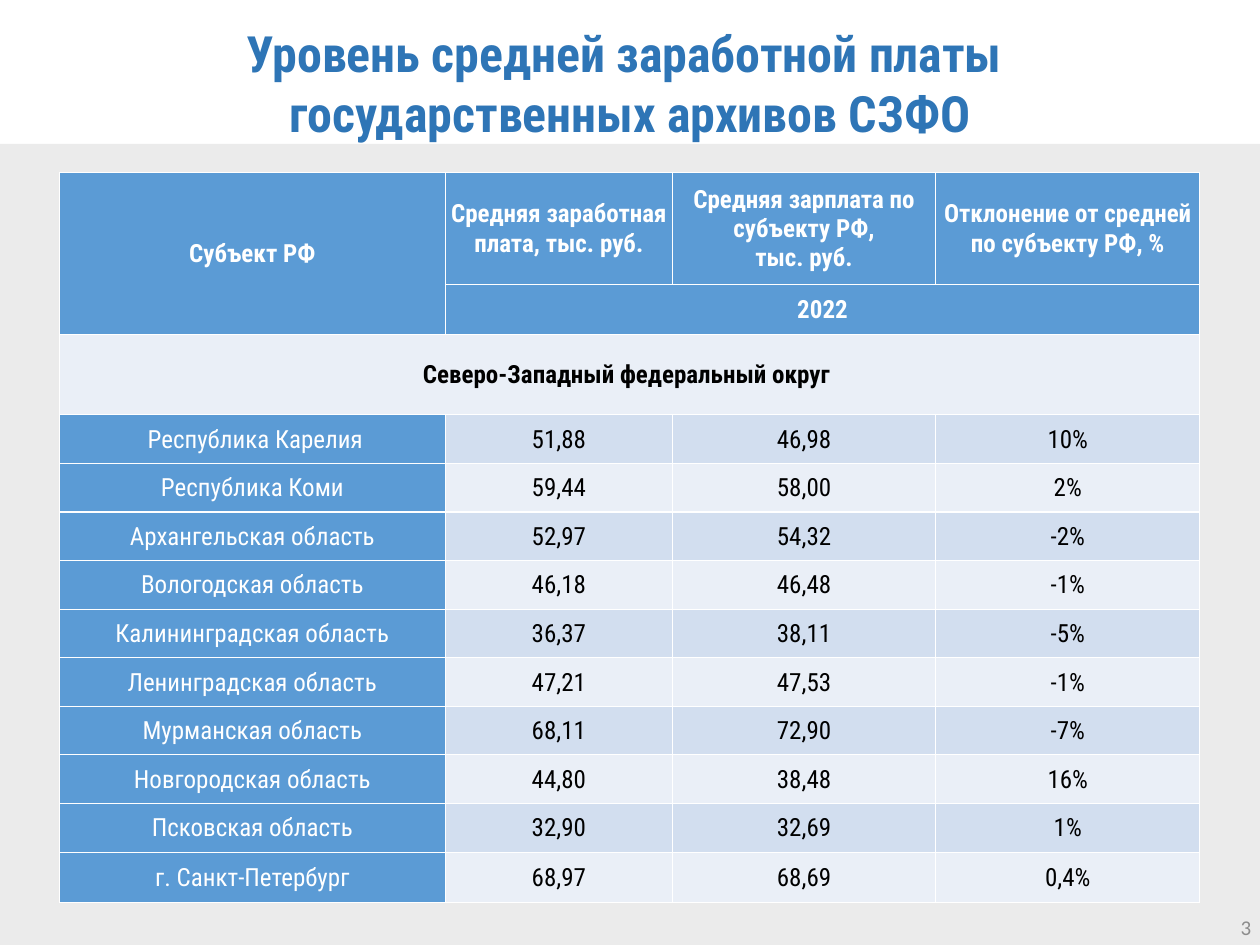
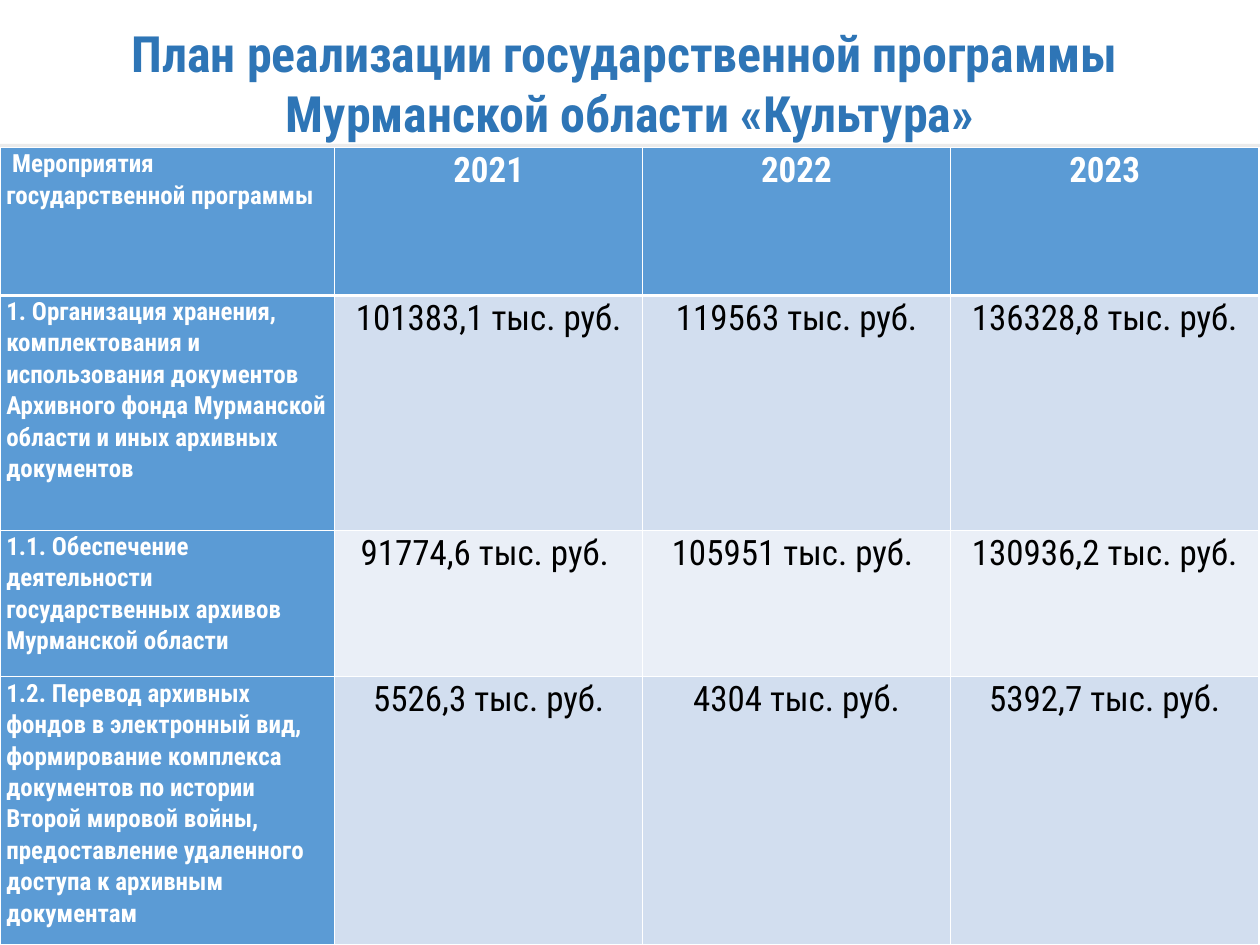
import pptx
import pptx.dml.color
import pptx.enum.shapes
import pptx.enum.text
import pptx.oxml
import pptx.oxml.ns
import pptx.util
from pptx.util import Inches

RGBColor = pptx.dml.color.RGBColor
PP_ALIGN = pptx.enum.text.PP_ALIGN
MSO_ANCHOR = pptx.enum.text.MSO_ANCHOR

WHITE = RGBColor(0xFF, 0xFF, 0xFF)
BLACK = RGBColor(0, 0, 0)
PANEL = RGBColor(0xEB, 0xEB, 0xEB)
TITLE_BLUE = RGBColor(0x2E, 0x75, 0xB6)
HEAD_BLUE = RGBColor(0x5B, 0x9B, 0xD5)
BAND_DARK = RGBColor(0xD2, 0xDE, 0xEF)
BAND_LIGHT = RGBColor(0xEA, 0xEF, 0xF7)
NUMBER_GRAY = RGBColor(0x8C, 0x8C, 0x8C)
FONT = "Roboto Condensed"

SALARIES = [
    (" Республика Карелия", "51,88", "46,98", "10%"),
    ("Республика Коми", "59,44", "58,00", "2%"),
    ("Архангельская область", "52,97", "54,32", "-2%"),
    ("Вологодская область", "46,18", "46,48", "-1%"),
    ("Калининградская область", "36,37", "38,11", "-5%"),
    ("Ленинградская область", "47,21", "47,53", "-1%"),
    ("Мурманская область", "68,11", "72,90", "-7%"),
    ("Новгородская область", "44,80", "38,48", "16%"),
    ("Псковская область", "32,90", "32,69", "1%"),
    ("г. Санкт-Петербург", "68,97", "68,69", "0,4%"),
]

PROGRAMME = [
    ("1. Организация хранения, комплектования и использования документов "
     "Архивного фонда Мурманской области и иных архивных документов",
     "101383,1 тыс. руб.", "119563 тыс. руб.", "136328,8 тыс. руб."),
    ("1.1. Обеспечение деятельности государственных архивов Мурманской области",
     "91774,6 тыс. руб. ", "105951 тыс. руб. ", "130936,2 тыс. руб."),
    ("1.2. Перевод архивных фондов в электронный вид, формирование комплекса "
     "документов по истории Второй мировой войны, предоставление удаленного "
     "доступа к архивным документам",
     "5526,3 тыс. руб.", "4304 тыс. руб.", "5392,7 тыс. руб."),
]


def write(tf, text, size, color, bold=False, align=PP_ALIGN.CENTER, spacing=1.0, font=FONT):
    tf.text = text
    for p in tf.paragraphs:
        p.alignment = align
        p.line_spacing = spacing
        p.font.name = font
        p.font.size = pptx.util.Pt(size)
        p.font.bold = bold
        p.font.color.rgb = color


def add_band(s, top, height, color):
    sp = s.shapes.add_shape(pptx.enum.shapes.MSO_SHAPE.RECTANGLE,
                            0, Inches(top), Inches(14), Inches(height))
    sp.shadow.inherit = False
    sp.fill.solid()
    sp.fill.fore_color.rgb = color
    sp.line.fill.background()


def add_base_slide(prs, title):
    s = prs.slides.add_slide(prs.slide_layouts[5])
    add_band(s, 0, 1, WHITE)
    add_band(s, 1.6, 8.9, PANEL)
    sp = s.shapes.title
    sp.element.getparent().append(sp.element)
    sp.left, sp.top, sp.width, sp.height = 0, Inches(0.2), Inches(14), Inches(1.45)
    tf = sp.text_frame
    tf.word_wrap = True
    tf.auto_size = pptx.enum.text.MSO_AUTO_SIZE.NONE
    tf.vertical_anchor = MSO_ANCHOR.TOP
    write(tf, title, 40, TITLE_BLUE, bold=True)
    return s


def add_page_number(s, number):
    tf = s.shapes.add_textbox(Inches(10.85), Inches(10.02),
                              Inches(3.15), Inches(0.56)).text_frame
    tf.word_wrap = True
    tf.vertical_anchor = MSO_ANCHOR.MIDDLE
    write(tf, number, 16.8, NUMBER_GRAY, align=PP_ALIGN.RIGHT, font="Calibri")


def set_borders(cell, bottom=1):
    tcPr = cell._tc.get_or_add_tcPr()
    for side, width in (("L", 1), ("R", 1), ("T", 1), ("B", bottom)):
        tcPr.append(pptx.oxml.parse_xml(
            f'<a:ln{side} {pptx.oxml.ns.nsdecls("a")} w="{pptx.util.Pt(width)}">'
            f'<a:solidFill><a:srgbClr val="{WHITE}"/></a:solidFill></a:ln{side}>'))


def add_grid(s, left, top, widths, heights):
    table = s.shapes.add_table(len(heights), len(widths), Inches(left), Inches(top),
                               Inches(sum(widths)), Inches(sum(heights))).table
    table.first_row = table.horz_banding = False
    for column, width in zip(table.columns, widths):
        column.width = Inches(width)
    for row, height in zip(table.rows, heights):
        row.height = Inches(height)
    return table


def style_cell(cell, fill, side_margin, top_margin=0, anchor=MSO_ANCHOR.TOP, bottom=1):
    set_borders(cell, bottom)
    cell.fill.solid()
    cell.fill.fore_color.rgb = fill
    cell.margin_left = cell.margin_right = Inches(side_margin)
    cell.margin_top, cell.margin_bottom = Inches(top_margin), 0
    cell.vertical_anchor = anchor


def add_salary_table(s):
    table = add_grid(s, 0.66, 1.92, [4.29, 2.52, 2.93, 2.93],
                     [1.24, 0.56, 0.89] + [0.54] * 9 + [0.56])
    rows = [
        ("Субъект РФ", "Средняя заработная плата, тыс. руб.",
         "Средняя зарплата по субъекту РФ,\nтыс. руб.",
         "Отклонение от средней по субъекту РФ, %"),
        ("", "2022", "", ""),
        ("Северо-Западный федеральный округ ", "", "", ""),
    ] + SALARIES
    for i, row in enumerate(rows):
        for j, text in enumerate(row):
            cell = table.cell(i, j)
            is_head = i < 2 or (j == 0 and i > 2)
            fill = HEAD_BLUE if is_head else BAND_DARK if i % 2 else BAND_LIGHT
            style_cell(cell, fill, 0.01, 0.01, MSO_ANCHOR.MIDDLE)
            if text:
                write(cell.text_frame, text, 20, WHITE if is_head else BLACK, bold=i < 3)
    for first, last in (((0, 0), (1, 0)), ((1, 1), (1, 3)), ((2, 0), (2, 3))):
        table.cell(*first).merge(table.cell(*last))


def add_programme_table(s):
    table = add_grid(s, 0, 1.64, [3.72, 3.42, 3.42, 3.43], [1.64, 2.61, 1.63, 2.98])
    rows = [(" Мероприятия государственной программы", "2021", "2022", "2023")] + PROGRAMME
    for i, row in enumerate(rows):
        for j, text in enumerate(row):
            cell = table.cell(i, j)
            is_head = i == 0 or j == 0
            fill = HEAD_BLUE if is_head else BAND_DARK if i % 2 else BAND_LIGHT
            style_cell(cell, fill, 0.07, bottom=1 if i else 3)
            write(cell.text_frame, text, 28 if j else 20, WHITE if is_head else BLACK,
                  bold=is_head, align=PP_ALIGN.CENTER if j else PP_ALIGN.LEFT, spacing=1.07)


def main():
    prs = pptx.Presentation()
    prs.slide_width, prs.slide_height = Inches(14), Inches(10.5)

    s = add_base_slide(prs, "Уровень средней заработной платы \nгосударственных архивов СЗФО")
    add_page_number(s, "3")
    add_salary_table(s)

    s = add_base_slide(prs, "План реализации государственной программы \n"
                            "Мурманской области «Культура»")
    add_programme_table(s)

    prs.save("out.pptx")


if __name__ == "__main__":
    main()
